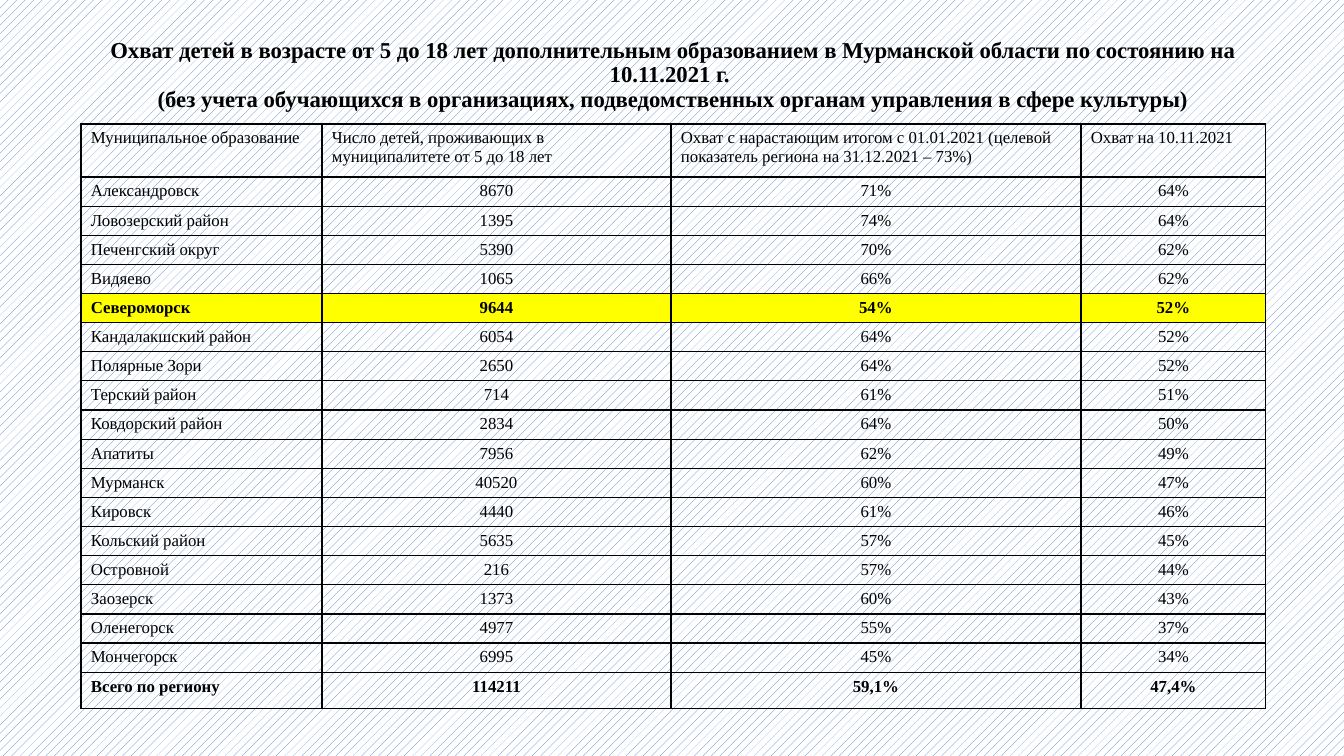
from dataclasses import dataclass

import lxml.etree
import pptx
import pptx.dml.color
import pptx.enum.dml
import pptx.enum.text
import pptx.oxml.ns
import pptx.slide
import pptx.table
import pptx.text.text
import pptx.util

SLIDE_WIDTH, SLIDE_HEIGHT = 1344, 756
EMU_PER_PX = 12192000 / SLIDE_WIDTH

TABLE_LEFT, TABLE_TOP = 81, 124
COLUMN_WIDTHS = (241, 349, 410, 185)
HEADER_HEIGHT, BODY_HEIGHT, TOTAL_HEIGHT = 53, 489, 36
CELL_SIDE, CELL_TOP, CELL_BOTTOM = 10, 5, 4


@dataclass(frozen=True)
class Theme:
    font: str = "Times New Roman"
    title_size: float = 16.2
    cell_size: float = 12
    border_width: float = 1
    text: str = "000000"
    border: str = "000000"
    highlight: str = "FFFF00"
    pattern: str = "4472C4"
    paper: str = "FFFFFF"


@dataclass(frozen=True)
class Coverage:
    municipality: str
    children: str
    cumulative: str
    current: str
    bold: bool = False
    highlighted: bool = False

    def texts(self) -> tuple[str, ...]:
        return self.municipality, self.children, self.cumulative, self.current


THEME = Theme()

TITLE = (
    "Охват детей в возрасте от 5 до 18 лет дополнительным образованием "
    "в Мурманской области по состоянию на 10.11.2021 г. \v"
    "(без учета обучающихся в организациях, подведомственных органам "
    "управления в сфере культуры)"
)

HEADER = Coverage(
    "Муниципальное образование",
    "Число детей, проживающих в муниципалитете от 5 до 18 лет",
    "Охват с нарастающим итогом с 01.01.2021 "
    "(целевой показатель региона на 31.12.2021 – 73%)",
    "Охват на 10.11.2021",
)

MUNICIPALITIES = (
    Coverage("Александровск", "8670", "71%", "64%"),
    Coverage("Ловозерский район", "1395", "74%", "64%"),
    Coverage("Печенгский округ", "5390", "70%", "62%"),
    Coverage("Видяево", "1065", "66%", "62%"),
    Coverage("Североморск", "9644", "54%", "52%", bold=True, highlighted=True),
    Coverage("Кандалакшский район", "6054", "64%", "52%"),
    Coverage("Полярные Зори", "2650", "64%", "52%"),
    Coverage("Терский район", "714", "61%", "51%"),
    Coverage("Ковдорский район", "2834", "64%", "50%"),
    Coverage("Апатиты", "7956", "62%", "49%"),
    Coverage("Мурманск", "40520", "60%", "47%"),
    Coverage("Кировск", "4440", "61%", "46%"),
    Coverage("Кольский район", "5635", "57%", "45%"),
    Coverage("Островной", "216", "57%", "44%"),
    Coverage("Заозерск", "1373", "60%", "43%"),
    Coverage("Оленегорск", "4977", "55%", "37%"),
    Coverage("Мончегорск", "6995", "45%", "34%"),
)

TOTAL = Coverage("Всего по региону", "114211", "59,1%", "47,4%", bold=True)


def px(length: float) -> pptx.util.Emu:
    return pptx.util.Emu(round(length * EMU_PER_PX))


def rgb(color: str) -> pptx.dml.color.RGBColor:
    return pptx.dml.color.RGBColor.from_string(color)


def style_paragraph(
    paragraph: pptx.text.text._Paragraph, size: float, bold: bool, centered: bool
) -> None:
    paragraph.font.name = THEME.font
    paragraph.font.size = pptx.util.Pt(size)
    paragraph.font.bold = bold
    paragraph.font.color.rgb = rgb(THEME.text)
    alignment = pptx.enum.text.PP_ALIGN
    paragraph.alignment = alignment.CENTER if centered else alignment.LEFT


def paint_background(slide: pptx.slide.Slide) -> None:
    fill = slide.background.fill
    fill.patterned()
    fill.pattern = pptx.enum.dml.MSO_PATTERN.PERCENT_20
    fill.fore_color.rgb = rgb(THEME.pattern)
    fill.back_color.rgb = rgb(THEME.paper)


def add_title(slide: pptx.slide.Slide) -> None:
    frame = slide.shapes.add_textbox(px(93), px(40), px(1159), px(71)).text_frame
    frame.word_wrap = True
    frame.vertical_anchor = pptx.enum.text.MSO_ANCHOR.MIDDLE
    paragraph = frame.paragraphs[0]
    paragraph.text = TITLE
    paragraph.line_spacing = 0.9
    style_paragraph(paragraph, THEME.title_size, bold=True, centered=True)


def add_borders(cell: pptx.table._Cell) -> None:
    """Put a solid line on all four sides, ahead of the cell's fill."""
    qn = pptx.oxml.ns.qn
    properties = cell._tc.get_or_add_tcPr()
    for position, side in enumerate(("a:lnL", "a:lnR", "a:lnT", "a:lnB")):
        line = lxml.etree.Element(
            qn(side), w=str(pptx.util.Pt(THEME.border_width))
        )
        solid = lxml.etree.SubElement(line, qn("a:solidFill"))
        lxml.etree.SubElement(solid, qn("a:srgbClr"), val=THEME.border)
        properties.insert(position, line)


def fill_cell(
    cell: pptx.table._Cell, text: str, coverage: Coverage, centered: bool
) -> None:
    cell.margin_left = cell.margin_right = px(CELL_SIDE)
    cell.margin_top, cell.margin_bottom = px(CELL_TOP), px(CELL_BOTTOM)
    paragraph = cell.text_frame.paragraphs[0]
    paragraph.text = text
    style_paragraph(paragraph, THEME.cell_size, coverage.bold, centered)
    if coverage.highlighted:
        cell.fill.solid()
        cell.fill.fore_color.rgb = rgb(THEME.highlight)
    else:
        cell.fill.background()
    add_borders(cell)


def add_coverage_table(slide: pptx.slide.Slide) -> None:
    rows = (HEADER, *MUNICIPALITIES, TOTAL)
    body_row = BODY_HEIGHT / len(MUNICIPALITIES)
    heights = (HEADER_HEIGHT, *[body_row] * len(MUNICIPALITIES), TOTAL_HEIGHT)
    table = slide.shapes.add_table(
        len(rows), len(COLUMN_WIDTHS),
        px(TABLE_LEFT), px(TABLE_TOP), px(sum(COLUMN_WIDTHS)), px(sum(heights)),
    ).table
    table.first_row = table.horz_banding = False
    for column, width in zip(table.columns, COLUMN_WIDTHS):
        column.width = px(width)
    for row, height, coverage in zip(table.rows, heights, rows):
        row.height = px(height)
        for index, (cell, text) in enumerate(zip(row.cells, coverage.texts())):
            centered = index > 0 and coverage is not HEADER
            fill_cell(cell, text, coverage, centered)


def main() -> None:
    presentation = pptx.Presentation()
    presentation.slide_width = px(SLIDE_WIDTH)
    presentation.slide_height = px(SLIDE_HEIGHT)
    slide = presentation.slides.add_slide(presentation.slide_layouts[6])
    paint_background(slide)
    add_title(slide)
    add_coverage_table(slide)
    presentation.save("out.pptx")


if __name__ == "__main__":
    main()
